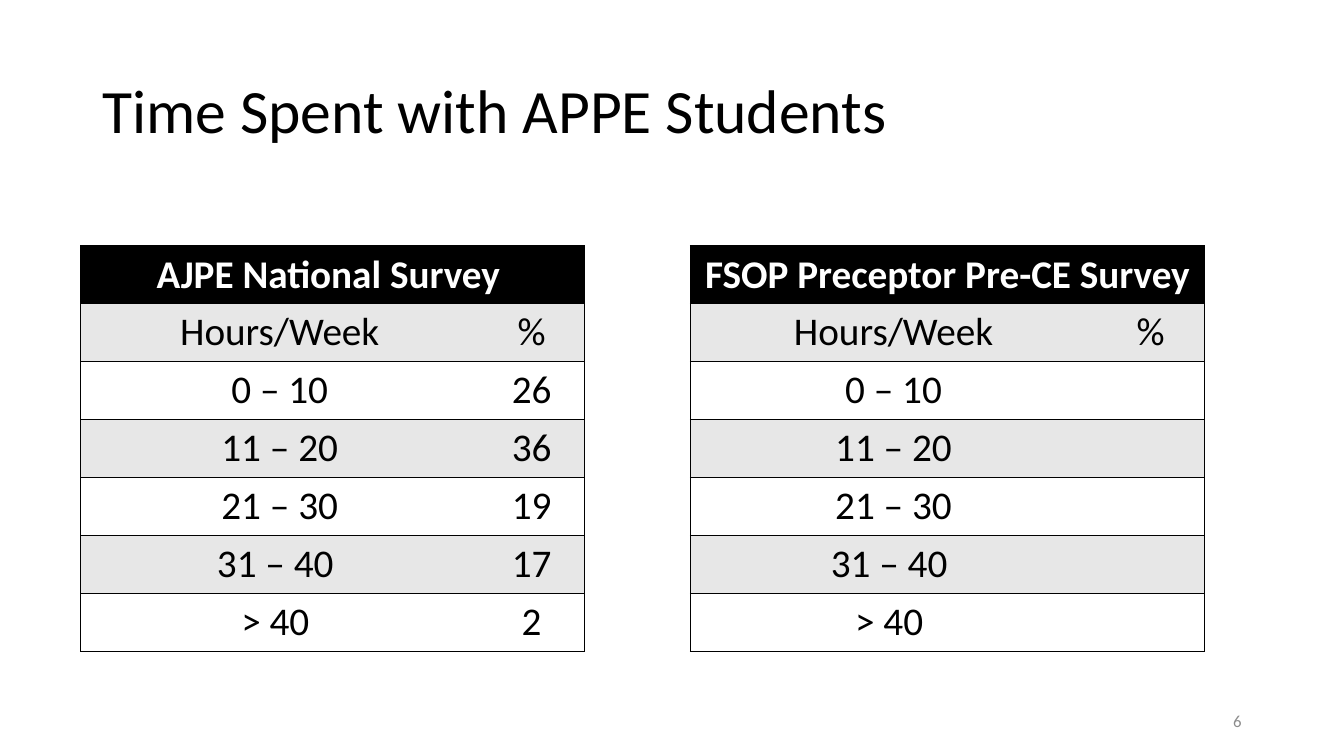
from dataclasses import dataclass

from lxml.etree import SubElement as Sub
from pptx import Presentation
from pptx.dml.color import RGBColor as RGB
from pptx.enum.text import MSO_ANCHOR as Anchor, PP_ALIGN as Align
from pptx.oxml.ns import qn
from pptx.util import Pt


@dataclass(frozen=True)
class Theme:
    font: str = "Calibri"
    black: str = "000000"
    white: str = "FFFFFF"
    band: str = "E7E7E7"
    gray: str = "8C8C8C"
    head: int = 44
    body: int = 28
    note: int = 12
    rule: int = 1


THEME = Theme()
HOURS = ["Hours/Week", "0 – 10", "11 – 20", "21 – 30", "31 – 40 ", "> 40 "]


def write(frame, text, size, color, align, bold=False):
    para = frame.paragraphs[0]
    para.alignment = align
    run = para.add_run()
    run.text = text
    style = {"name": THEME.font, "size": Pt(size), "bold": bold}
    for key, value in style.items():
        setattr(run.font, key, value)
    run.font.color.rgb = RGB.from_string(color)
    return para


def add_text(slide, box, text, size, color, align):
    frame = slide.shapes.add_textbox(*map(Pt, box)).text_frame
    frame.word_wrap = True
    frame.vertical_anchor = Anchor.MIDDLE
    return write(frame, text, size, color, align)


def edge(cell, drawn):
    """Rule the named sides of a cell and clear the others."""
    props = cell._tc.get_or_add_tcPr()
    for side in "LRTB":
        line = Sub(props, qn("a:ln" + side), w=str(Pt(THEME.rule)))
        if side in drawn:
            fill = Sub(line, qn("a:solidFill"))
            Sub(fill, qn("a:srgbClr"), val=THEME.black)
        else:
            Sub(line, qn("a:noFill"))


def add_survey(slide, box, title, shares):
    left, top, width, height = box
    rows = [(title, "")] + list(zip(HOURS, ["%"] + shares))
    grid = slide.shapes.add_table(len(rows), 2, *map(Pt, box)).table
    grid.first_row = grid.horz_banding = False
    for col, part in zip(grid.columns, (0.79, 0.21)):
        col.width = Pt(round(width * part, 2))

    for i, texts in enumerate(rows):
        grid.rows[i].height = Pt(height / len(rows))
        back = THEME.band if i % 2 else THEME.white
        for j, text in enumerate(texts):
            cell = grid.cell(i, j)
            edge(cell, "LRTB" if i == 0 else ("LTB", "RTB")[j])
            cell.fill.solid()
            cell.fill.fore_color.rgb = RGB.from_string(back if i else THEME.black)
            if text:
                color = THEME.black if i else THEME.white
                write(cell.text_frame, text, THEME.body, color, Align.CENTER, i == 0)

    # The title row spans both columns
    grid.cell(0, 0).merge(grid.cell(0, 1))


def build(slide):
    # Title
    head = add_text(slide, (66, 28.8, 828, 104.4), "Time Spent with APPE Students",
                    THEME.head, THEME.black, Align.LEFT)
    head.line_spacing = 0.9

    # Survey tables
    add_survey(slide, (57.6, 175.5, 360, 289.8), "AJPE National Survey ",
               ["26", "36", "19", "17", "2"])
    add_survey(slide, (493.2, 175.5, 367.2, 289.8), "FSOP Preceptor Pre-CE Survey",
               [""] * 5)

    # Slide number
    add_text(slide, (678, 500.5, 216, 28.8), "6", THEME.note, THEME.gray, Align.RIGHT)


def main():
    deck = Presentation()
    deck.slide_width, deck.slide_height = Pt(960), Pt(540)
    build(deck.slides.add_slide(deck.slide_layouts[6]))
    deck.save("out.pptx")


if __name__ == "__main__":
    main()
